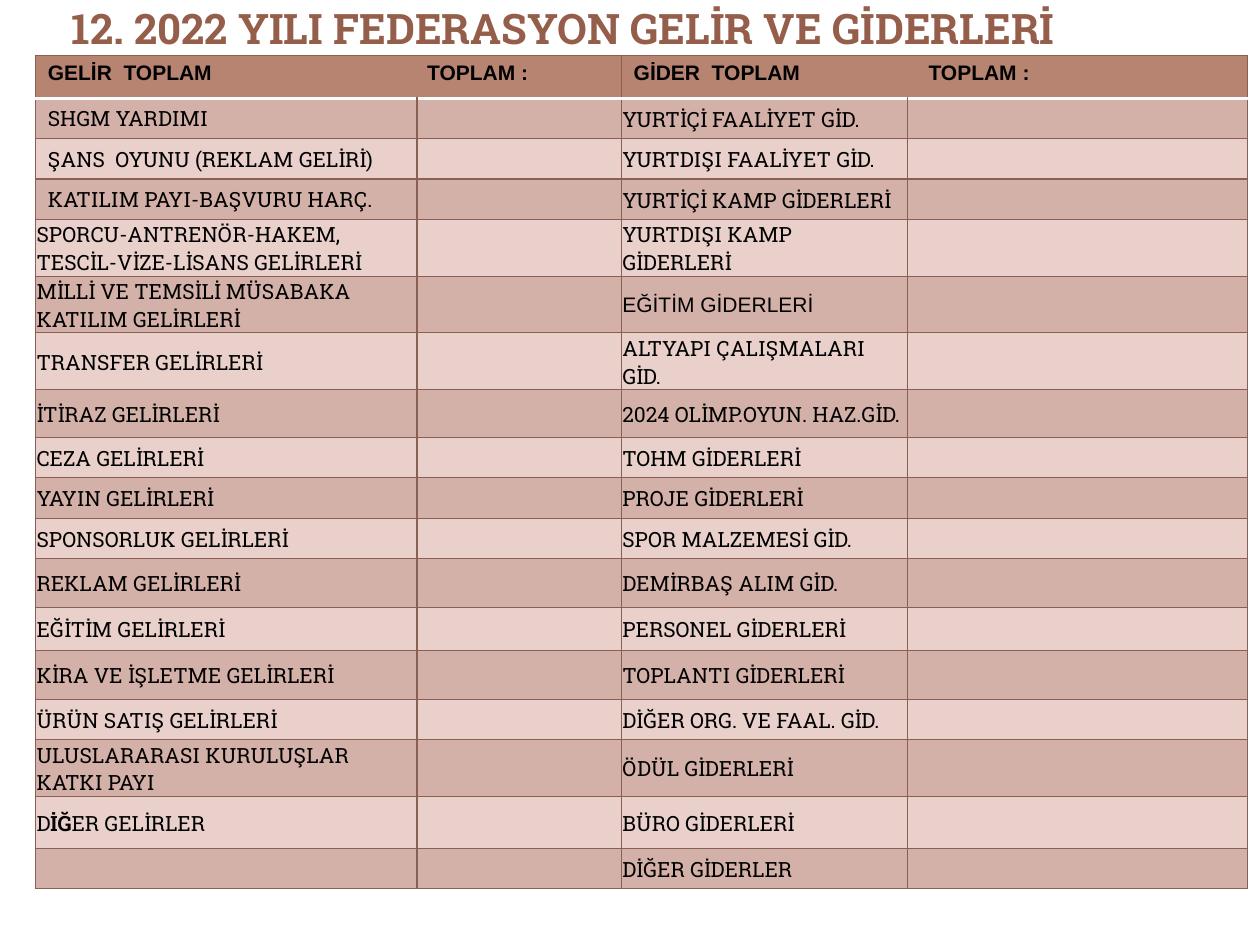
"""Build the federation income and expense table slide."""
from lxml import etree
from pptx import Presentation
from pptx.dml.color import RGBColor
from pptx.enum.text import MSO_ANCHOR, MSO_AUTO_SIZE, PP_ALIGN
from pptx.oxml.ns import qn
from pptx.util import Inches, Pt

MIDDLE, TOP = MSO_ANCHOR.MIDDLE, MSO_ANCHOR.TOP
LEFT = PP_ALIGN.LEFT
NO_FIT = MSO_AUTO_SIZE.NONE

THEME = {
    "title": "955E4B", "text": "000000", "header": "B88472",
    "bands": ("E9D0CB", "D4B1A8"), "line": "896154", "rule": "FFFFFF",
    "slab": "Roboto Slab", "sans": "Arial",
    "title_size": 24, "text_size": 12, "line_width": 0.75, "rule_width": 2,
}

COLUMNS = (3.03, 1.62, 2.27, 2.7)
ROWS = (0.34, 0.32, 0.32, 0.32, 0.45, 0.45, 0.45, 0.38, 0.32,
        0.32, 0.32, 0.39, 0.34, 0.39, 0.32, 0.45, 0.41, 0.32)
HEADERS = {0: ("GELİR  TOPLAM\tTOPLAM :", 3.01),
           2: ("GİDER  TOPLAM\tTOPLAM :", 2.34)}
ITEMS = (
    ("SHGM YARDIMI", "YURTİÇİ FAALİYET GİD."),
    ("ŞANS  OYUNU (REKLAM GELİRİ)", "YURTDIŞI FAALİYET GİD."),
    ("KATILIM PAYI-BAŞVURU HARÇ.", "YURTİÇİ KAMP GİDERLERİ"),
    ("SPORCU-ANTRENÖR-HAKEM, TESCİL-VİZE-LİSANS GELİRLERİ", "YURTDIŞI KAMP GİDERLERİ"),
    ("MİLLİ VE TEMSİLİ MÜSABAKA KATILIM GELİRLERİ", "EĞİTİM GİDERLERİ"),
    ("TRANSFER GELİRLERİ", "ALTYAPI ÇALIŞMALARI GİD."),
    ("İTİRAZ GELİRLERİ", "2024 OLİMP.OYUN. HAZ.GİD."),
    ("CEZA GELİRLERİ", "TOHM GİDERLERİ"),
    ("YAYIN GELİRLERİ", "PROJE GİDERLERİ"),
    ("SPONSORLUK GELİRLERİ", "SPOR MALZEMESİ GİD."),
    ("REKLAM GELİRLERİ", "DEMİRBAŞ ALIM GİD."),
    ("EĞİTİM GELİRLERİ", "PERSONEL GİDERLERİ"),
    ("KİRA VE İŞLETME GELİRLERİ", "TOPLANTI GİDERLERİ"),
    ("ÜRÜN SATIŞ GELİRLERİ", "DİĞER ORG. VE FAAL. GİD."),
    ("ULUSLARARASI KURULUŞLAR KATKI PAYI", "ÖDÜL GİDERLERİ"),
    ("D|İĞ|ER GELİRLER", "BÜRO GİDERLERİ"),
    ("", "DİĞER GİDERLER"),
)


def write(para, text, color, **formats):
    """Add a formatted run to a paragraph."""
    span = para.add_run()
    span.text = text
    span.font.color.rgb = RGBColor.from_string(color)
    for name, value in formats.items():
        setattr(span.font, name, value)


def dress(cell, fill, rule_side):
    """Give a cell its borders and fill, with a thick rule on one side."""
    properties = cell._tc.get_or_add_tcPr()
    for side in "LRTB":
        kind = "rule" if side == rule_side else "line"
        line = etree.SubElement(properties, qn(f"a:ln{side}"),
                                w=str(Pt(THEME[f"{kind}_width"])))
        solid = etree.SubElement(line, qn("a:solidFill"))
        etree.SubElement(solid, qn("a:srgbClr"), val=THEME[kind])
    cell.fill.solid()
    cell.fill.fore_color.rgb = RGBColor.from_string(fill)


deck = Presentation()
deck.slide_width, deck.slide_height = Inches(10), Inches(7.5)
page = deck.slides.add_slide(deck.slide_layouts[5])

title = page.shapes.title
title_place = {"left": 0.47, "top": 0, "width": 9, "height": 0.56}
for name, value in title_place.items():
    setattr(title, name, Inches(value))
frame_formats = {"word_wrap": True, "auto_size": NO_FIT, "vertical_anchor": TOP,
                 "margin_top": Inches(0.02)}
for name, value in frame_formats.items():
    setattr(title.text_frame, name, value)
para = title.text_frame.paragraphs[0]
para.alignment = LEFT
write(para, "12. 2022 YILI FEDERASYON GELİR VE GİDERLERİ", THEME["title"],
      name=THEME["slab"], size=Pt(THEME["title_size"]), bold=True)

table = page.shapes.add_table(
    len(ROWS), len(COLUMNS), Inches(0.28), Inches(0.44),
    Inches(sum(COLUMNS)), Inches(sum(ROWS))).table
table.first_row = table.horz_banding = False
for column, width in zip(table.columns, COLUMNS):
    column.width = Inches(width)
for row, height in zip(table.rows, ROWS):
    row.height = Inches(height)

for row in range(len(ROWS)):
    fill = THEME["bands"][row % 2] if row else THEME["header"]
    for column in range(len(COLUMNS)):
        dress(table.cell(row, column), fill, {0: "B", 1: "T"}.get(row))

for column, (text, stop) in HEADERS.items():
    cell = table.cell(0, column)
    cell.merge(table.cell(0, column + 1))
    cell.vertical_anchor = TOP
    para = cell.text_frame.paragraphs[0]
    stops = etree.SubElement(para._p.get_or_add_pPr(), qn("a:tabLst"))
    etree.SubElement(stops, qn("a:tab"), pos=str(Inches(stop)), algn="l")
    write(para, text, THEME["text"], name=THEME["sans"],
          size=Pt(THEME["text_size"]), bold=True)

for row, (income, expense) in enumerate(ITEMS, 1):
    for column, text in enumerate((income, "", expense, "")):
        cell = table.cell(row, column)
        cell.vertical_anchor = MIDDLE
        if column or row > 3:
            margins = {"left": 0.01, "right": 0.01, "top": 0.01, "bottom": 0}
            for side, value in margins.items():
                setattr(cell, f"margin_{side}", Inches(value))
        if not text:
            continue
        face = THEME["sans"] if text == "EĞİTİM GİDERLERİ" else THEME["slab"]
        for index, part in enumerate(text.split("|")):
            write(cell.text_frame.paragraphs[0], part, THEME["text"], name=face,
                  size=Pt(THEME["text_size"]), bold=index == 1)

deck.save("out.pptx")
